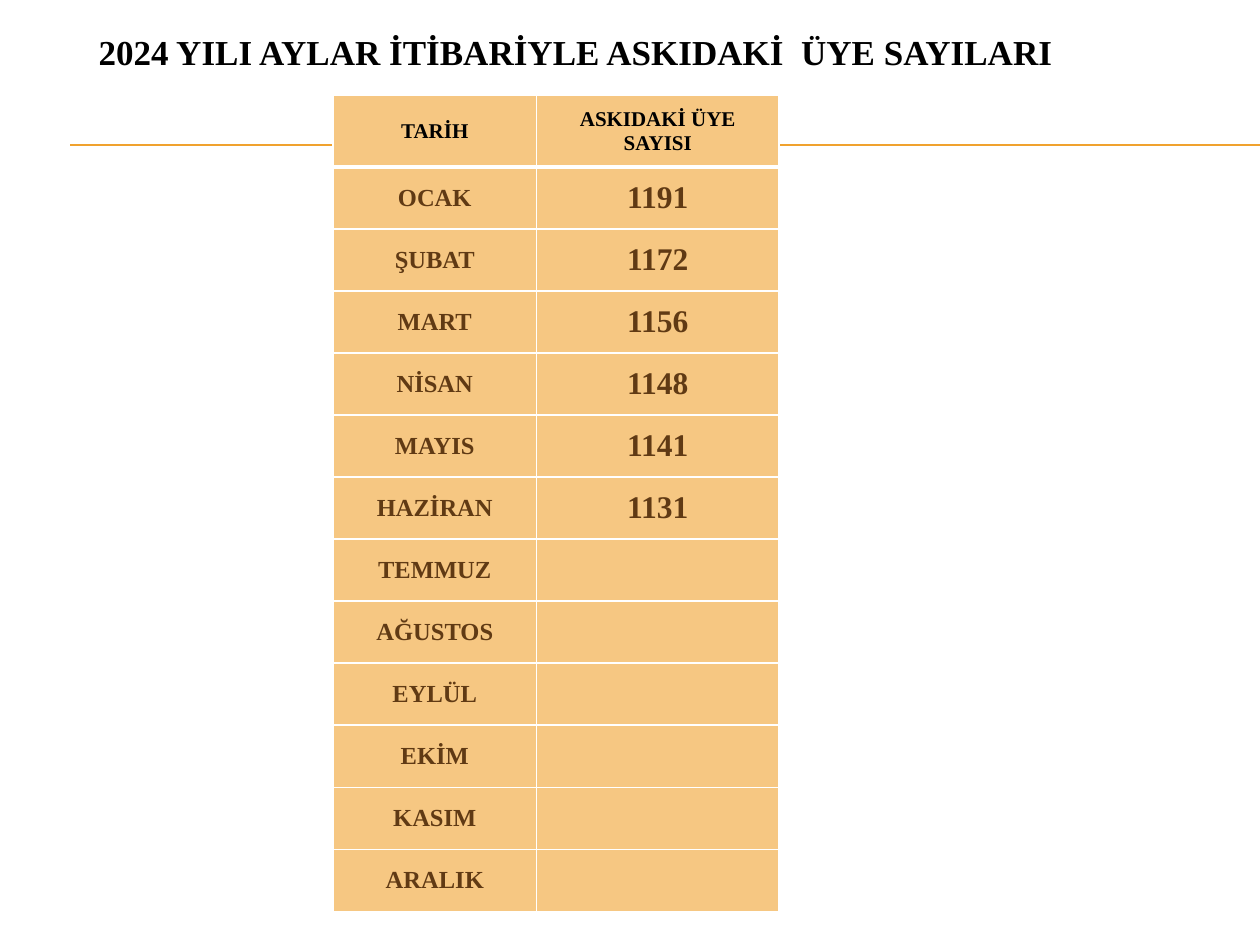
from lxml.etree import SubElement
from pptx import Presentation
from pptx.dml.color import RGBColor
from pptx.enum.shapes import MSO_CONNECTOR
from pptx.enum.text import MSO_ANCHOR, PP_ALIGN
from pptx.oxml.ns import qn
from pptx.util import Cm, Pt

BLACK = RGBColor(0x00, 0x00, 0x00)
WHITE = RGBColor(0xFF, 0xFF, 0xFF)
BROWN = RGBColor(0x60, 0x3A, 0x14)
ORANGE = RGBColor(0xF0, 0xA2, 0x2E)
LIGHT_ORANGE = RGBColor(0xF6, 0xC7, 0x82)

MONTHS = ["OCAK", "ŞUBAT", "MART", "NİSAN", "MAYIS", "HAZİRAN", "TEMMUZ",
          "AĞUSTOS", "EYLÜL", "EKİM", "KASIM", "ARALIK"]
MEMBER_COUNTS = [1191, 1172, 1156, 1148, 1141, 1131]


def write_centred(text_frame, text, size, color):
    paragraph = text_frame.paragraphs[0]
    paragraph.alignment = PP_ALIGN.CENTER
    run = paragraph.add_run()
    run.text = text
    run.font.name = "Times New Roman"
    run.font.size = Pt(size)
    run.font.bold = True
    run.font.color.rgb = color


def set_borders(cell, bottom_width):
    properties = cell._tc.get_or_add_tcPr()
    widths = {"a:lnL": 1, "a:lnR": 1, "a:lnT": 1, "a:lnB": bottom_width}
    for position, (tag, width) in enumerate(widths.items()):
        border = SubElement(properties, qn(tag), w=str(Pt(width)))
        fill = SubElement(border, qn("a:solidFill"))
        SubElement(fill, qn("a:srgbClr"), val=str(WHITE))
        properties.insert(position, border)


presentation = Presentation()
presentation.slide_width = Cm(25.4)
presentation.slide_height = Cm(19.05)
slide = presentation.slides.add_slide(presentation.slide_layouts[6])

for line_top in (Cm(2.92), Cm(2.94)):
    rule = slide.shapes.add_connector(
        MSO_CONNECTOR.STRAIGHT, Cm(1.42), line_top, Cm(25.4), line_top)
    rule.line.color.rgb = ORANGE
    rule.line.width = Pt(0.75)
    SubElement(rule._element.spPr, qn("a:effectLst"))

table = slide.shapes.add_table(
    len(MONTHS) + 1, 2, Cm(6.71), Cm(1.93), Cm(8.99), Cm(16.41)).table
table.columns[0].width = Cm(4.11)
table.columns[1].width = Cm(4.88)

rows = [("TARİH", "ASKIDAKİ ÜYE SAYISI")]
for index, month in enumerate(MONTHS):
    count = str(MEMBER_COUNTS[index]) if index < len(MEMBER_COUNTS) else ""
    rows.append((month, count))

for row_index, texts in enumerate(rows):
    is_header = row_index == 0
    table.rows[row_index].height = Cm(1.44) if is_header else Cm(1.25)
    sizes = (12, 12) if is_header else (14, 18)
    for column_index, text in enumerate(texts):
        cell = table.cell(row_index, column_index)
        cell.fill.solid()
        cell.fill.fore_color.rgb = LIGHT_ORANGE
        cell.vertical_anchor = MSO_ANCHOR.MIDDLE
        set_borders(cell, 3 if is_header else 1)
        if text:
            write_centred(cell.text_frame, text, sizes[column_index],
                          BLACK if is_header else BROWN)

for column_index in range(2):
    top_border = table.cell(1, column_index)._tc.tcPr.find(qn("a:lnT"))
    top_border.set("w", str(Pt(3)))

title = slide.shapes.add_textbox(Cm(0.71), Cm(0.13), Cm(21.79), Cm(1.8))
title.text_frame.word_wrap = True
title.text_frame.vertical_anchor = MSO_ANCHOR.MIDDLE
write_centred(title.text_frame,
              "2024 YILI AYLAR İTİBARİYLE ASKIDAKİ  ÜYE SAYILARI", 20, BLACK)

presentation.save("out.pptx")
